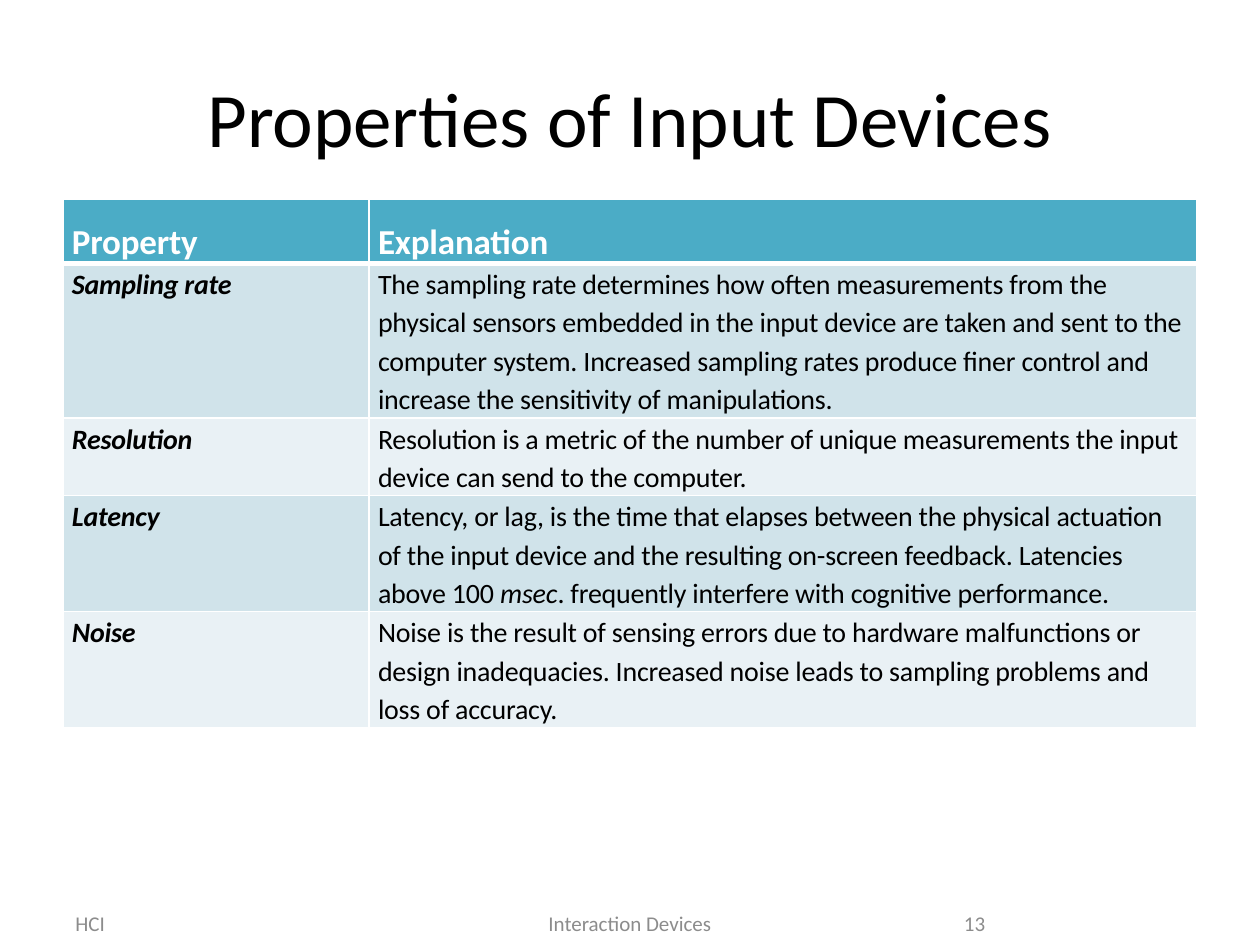
from lxml import etree
from pptx import Presentation
from pptx.dml.color import RGBColor
from pptx.enum.text import MSO_ANCHOR, PP_ALIGN
from pptx.oxml.ns import qn
from pptx.util import Cm, Pt

LEFT, CENTER, RIGHT = PP_ALIGN.LEFT, PP_ALIGN.CENTER, PP_ALIGN.RIGHT
MIDDLE = MSO_ANCHOR.MIDDLE

BLACK = RGBColor(0x00, 0x00, 0x00)
WHITE = RGBColor(0xFF, 0xFF, 0xFF)
GRAY = RGBColor(0x8C, 0x8C, 0x8C)
TEAL = RGBColor(0x4B, 0xAC, 0xC6)
BANDS = (RGBColor(0xD0, 0xE3, 0xEA), RGBColor(0xE9, 0xF1, 0xF5))
FONT = "Calibri"

TITLE = "Properties of Input Devices"
HEADERS = ("Property", "Explanation")
PROPERTIES = [
    ("Sampling rate", 4, [
        ("The sampling rate determines how often measurements from the physical sensors "
         "embedded in the input device are taken and sent to the computer system. "
         "Increased sampling rates produce finer control and increase the sensitivity "
         "of manipulations.", False)]),
    ("Resolution", 2, [
        ("Resolution is a metric of the number of unique measurements the input device "
         "can send to the computer.", False)]),
    ("Latency", 3, [
        ("Latency, or lag, is the time that elapses between the physical actuation of "
         "the input device and the resulting on-screen feedback. Latencies above 100 ", False),
        ("msec", True),
        (". frequently interfere with cognitive performance.", False)]),
    ("Noise", 3, [
        ("Noise is the result of sensing errors due to hardware malfunctions or design "
         "inadequacies. Increased noise leads to sampling problems and loss of accuracy.",
         False)]),
]
FOOTERS = [
    ("HCI", 1.27, 5.93, LEFT),
    ("Interaction Devices", 8.68, 8.04, CENTER),
    ("13", 18.2, 1.91, RIGHT),
]

MARGIN = 1.27
CONTENT_WIDTH = 22.86
TABLE_TOP = 4.02
COLUMN_WIDTHS = (6.17, 16.69)
HEADER_HEIGHT = 1.29
LINE_HEIGHT = 0.78
LINE_SPACING = Pt(22)


def add_run(paragraph, text, size, color, bold=False, italic=False):
    run = paragraph.add_run()
    run.text = text
    font = run.font
    font.name, font.size = FONT, Pt(size)
    font.bold, font.italic = bold, italic
    font.color.rgb = color
    return run


def add_text(slide, text, left, top, width, height, size, color, alignment):
    box = slide.shapes.add_textbox(Cm(left), Cm(top), Cm(width), Cm(height))
    frame = box.text_frame
    frame.word_wrap = True
    frame.vertical_anchor = MIDDLE
    paragraph = frame.paragraphs[0]
    paragraph.alignment = alignment
    add_run(paragraph, text, size, color)


def add_borders(cell, widths):
    properties = cell._tc.get_or_add_tcPr()
    for index, (side, width) in enumerate(widths.items()):
        line = etree.Element(qn(f"a:ln{side}"), w=str(Pt(width)))
        fill = etree.SubElement(line, qn("a:solidFill"))
        etree.SubElement(fill, qn("a:srgbClr"), val=str(WHITE))
        properties.insert(index, line)


def fill_cell(cell, runs, size, color, bold, line_spacing, background, top=1, bottom=1):
    cell.margin_left = cell.margin_right = Cm(0.18)
    cell.margin_top = cell.margin_bottom = 0
    cell.fill.solid()
    cell.fill.fore_color.rgb = background
    add_borders(cell, {"L": 1, "R": 1, "T": top, "B": bottom})
    paragraph = cell.text_frame.paragraphs[0]
    paragraph.line_spacing = line_spacing
    for text, italic in runs:
        run = add_run(paragraph, text, size, color, bold, italic)
        run._r.get_or_add_rPr().set("spc", "-10")


def add_property_table(slide):
    heights = [HEADER_HEIGHT] + [lines * LINE_HEIGHT for _, lines, _ in PROPERTIES]
    table = slide.shapes.add_table(
        len(heights), len(COLUMN_WIDTHS), Cm(MARGIN), Cm(TABLE_TOP),
        Cm(CONTENT_WIDTH), Cm(sum(heights))).table
    table.horz_banding = False
    for column, width in zip(table.columns, COLUMN_WIDTHS):
        column.width = Cm(width)
    for row, height in zip(table.rows, heights):
        row.height = Cm(height)
    for column, header in enumerate(HEADERS):
        fill_cell(table.cell(0, column), [(header, False)], 20, WHITE, True, 1.5, TEAL,
                  bottom=3)
    for row, (name, _, explanation) in enumerate(PROPERTIES, start=1):
        background = BANDS[(row - 1) % len(BANDS)]
        top = 3 if row == 1 else 1
        for column, runs in enumerate(([(name, True)], explanation)):
            fill_cell(table.cell(row, column), runs, 16, BLACK, column == 0,
                      LINE_SPACING, background, top=top)


def main():
    presentation = Presentation()
    presentation.slide_width, presentation.slide_height = Cm(25.4), Cm(19.05)
    slide = presentation.slides.add_slide(presentation.slide_layouts[6])
    add_text(slide, TITLE, MARGIN, 0.76, CONTENT_WIDTH, 3.18, 44, BLACK, CENTER)
    add_property_table(slide)
    for text, left, width, alignment in FOOTERS:
        add_text(slide, text, left, 18.21, width, 0.79, 12, GRAY, alignment)
    presentation.save("out.pptx")


if __name__ == "__main__":
    main()
